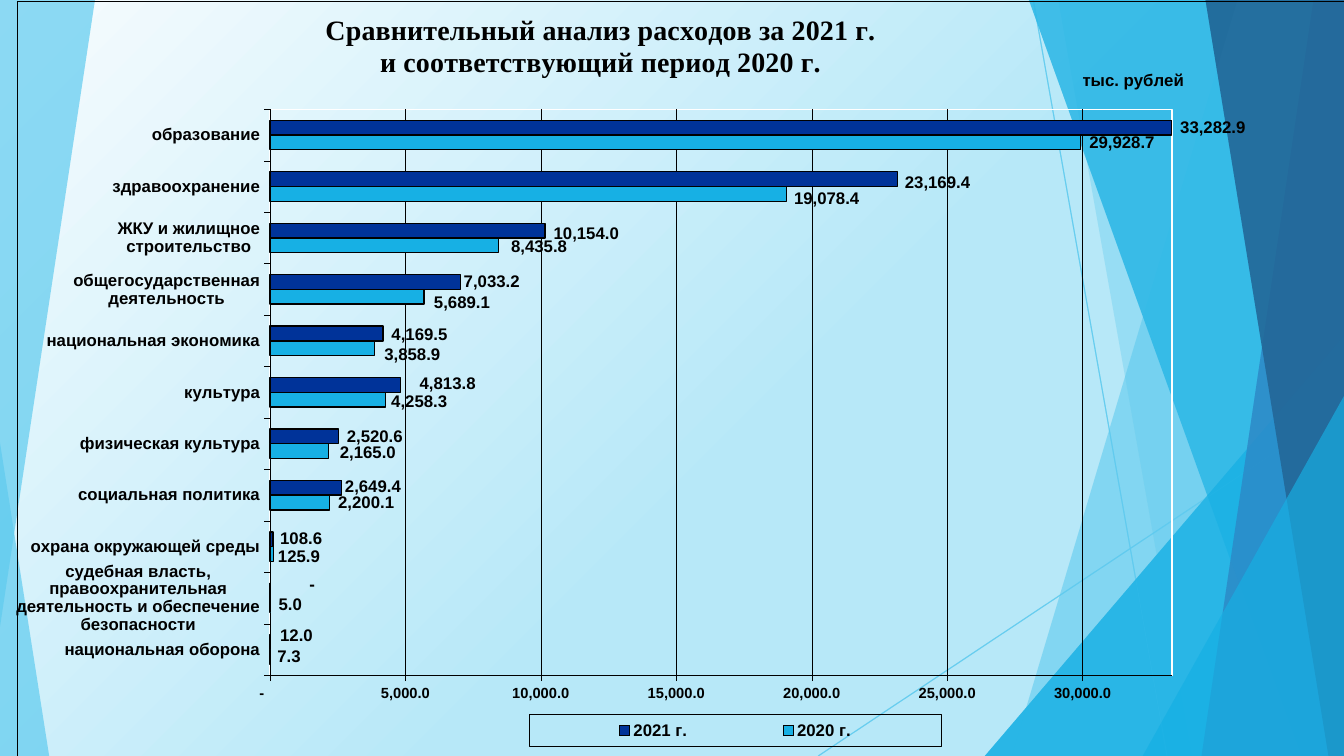
from dataclasses import dataclass

from lxml import etree
from pptx import Presentation
from pptx.chart.data import CategoryChartData
from pptx.dml.color import RGBColor
from pptx.enum.chart import XL_CHART_TYPE, XL_LABEL_POSITION, XL_LEGEND_POSITION, XL_TICK_MARK
from pptx.enum.shapes import MSO_CONNECTOR, MSO_SHAPE
from pptx.oxml.ns import qn
from pptx.util import Cm, Pt

BAR_CLUSTERED = XL_CHART_TYPE.BAR_CLUSTERED
OUTSIDE_END = XL_LABEL_POSITION.OUTSIDE_END
LEGEND_RIGHT = XL_LEGEND_POSITION.RIGHT
TICK_OUTSIDE = XL_TICK_MARK.OUTSIDE
STRAIGHT = MSO_CONNECTOR.STRAIGHT
TRIANGLE = MSO_SHAPE.ISOSCELES_TRIANGLE

WIDTH, HEIGHT = 33.87, 19.05
BLACK, WHITE = "000000", "FFFFFF"
SKY, AZURE, STEEL, NAVY, ROYAL = "5FCBEF", "17B0E4", "2E83C3", "226292", "003399"
BACKGROUND_STOPS = [(0, "F7FCFE"), (0.57, "B7E8F8")]
BODY_FONT, TITLE_FONT = "Arial", "Times New Roman"
HAIRLINE = 0.25
NUMBER_FORMAT = '_(* #,##0.0_);_(* \\(#,##0.0\\);_(* "-"??_);_(@_)'


@dataclass
class Ray:
    start: tuple[float, float]
    end: tuple[float, float]


@dataclass
class Panel:
    points: list[tuple[float, float]]
    color: str
    opacity: int


@dataclass
class Corner:
    """Right triangle on the bottom edge; apex is 0 for its left end, 1 for its right end."""
    left: float
    top: float
    width: float
    apex: int
    color: str
    opacity: int


@dataclass
class Spending:
    """One year; label_shifts maps a category index to (x, y) in thousandths of the chart."""
    year: str
    color: str
    values: list[float]
    label_shifts: dict[int, tuple[float, float]]


def side_panel(top_x: float, bottom_x: float, color: str, opacity: int) -> Panel:
    """Panel that fills everything from a slanted edge to the right side."""
    return Panel([(top_x, 0), (WIDTH, 0), (WIDTH, HEIGHT), (bottom_x, HEIGHT)], color, opacity)


RIGHT_FACETS = [
    Ray((26.04, 0), (29.41, HEIGHT)),
    Ray((WIDTH, 10.24), (20.62, HEIGHT)),
    side_panel(31.19, 25.5, SKY, 36),
    side_panel(26.67, 30.05, SKY, 20),
    Corner(24.82, 8.46, 9.05, 1, AZURE, 66),
    side_panel(25.93, 32.79, AZURE, 50),
    side_panel(33.1, 30.28, STEEL, 70),
    side_panel(30.38, 33.48, NAVY, 80),
    Corner(28.8, 9.98, 5.07, 1, AZURE, 66),
]
LEFT_CORNER = Corner(0, 11.15, 1.24, 0, SKY, 70)
LEFT_PANEL = Panel([(0, 0), (2.39, 0), (2.39, 0.03), (0, 15.8)], SKY, 70)
# Two translucent layers share the right side, which deepens its colours.
BACKDROP_LAYERS = [[*RIGHT_FACETS, LEFT_CORNER], [LEFT_PANEL, *RIGHT_FACETS]]

TITLE_LINES = ["Сравнительный анализ расходов за 2021 г.", "и соответствующий период 2020 г."]
UNIT_LINES = ["тыс. рублей"]
CATEGORIES = [
    "национальная оборона",
    "cудебная власть, правоохранительная деятельность и обеспечение безопасности",
    "охрана окружающей среды", "социальная политика", "физическая культура", "культура",
    "национальная экономика", "общегосударственная деятельность",
    "ЖКУ и жилищное строительство", "здравоохранение", "образование",
]
SPENDING = [
    Spending("2020 г.", AZURE,
             [7.3, 5, 125.9, 2200.1, 2165, 4258.3, 3858.9, 5689.1, 8435.8, 19078.4, 29928.7],
             {0: (-1, 0), 1: (0, -1), 2: (-3, 3), 4: (2, 2), 5: (-2, 3), 6: (1, 9),
              7: (1, 8), 8: (3, 2), 9: (-1, 6)}),
    Spending("2021 г.", ROYAL,
             [12, 0, 108.6, 2649.4, 2520.6, 4813.8, 4169.5, 7033.2, 10154, 23169.4, 33282.9],
             {0: (1, -9), 1: (23, -8), 2: (-1, -1), 3: (-4, -2), 4: (0, 0), 5: (8, -2),
              6: (0, 1), 7: (-4, 0), 8: (0, 4), 9: (-1, 5)}),
]


def rgb(color: str) -> RGBColor:
    return RGBColor.from_string(color)


def set_opacity(properties, percent: int) -> None:
    color = properties.find(".//" + qn("a:srgbClr"))
    etree.SubElement(color, qn("a:alpha"), val=str(percent * 1000))


def draw_ray(slide, ray: Ray) -> None:
    connector = slide.shapes.add_connector(STRAIGHT, *map(Cm, ray.start + ray.end))
    connector.line.color.rgb = rgb(SKY)
    connector.line.width = Pt(0.75)
    properties = connector.element.find(qn("p:spPr"))
    set_opacity(properties, 70)
    etree.SubElement(properties, qn("a:effectLst"))


def add_panel(slide, panel: Panel):
    start, *others = [(Cm(x), Cm(y)) for x, y in panel.points]
    builder = slide.shapes.build_freeform(*start)
    builder.add_line_segments(others)
    return builder.convert_to_shape()


def add_corner(slide, corner: Corner):
    box = (corner.left, corner.top, corner.width, HEIGHT - corner.top)
    shape = slide.shapes.add_shape(TRIANGLE, *map(Cm, box))
    shape.adjustments[0] = corner.apex
    return shape


def draw_facet(slide, facet: Ray | Panel | Corner) -> None:
    if isinstance(facet, Ray):
        draw_ray(slide, facet)
        return
    shape = add_panel(slide, facet) if isinstance(facet, Panel) else add_corner(slide, facet)
    shape.shadow.inherit = False
    shape.fill.solid()
    shape.fill.fore_color.rgb = rgb(facet.color)
    set_opacity(shape.element.find(qn("p:spPr")), facet.opacity)
    shape.line.fill.background()


def draw_backdrop(slide) -> None:
    fill = slide.background.fill
    fill.gradient()
    fill.gradient_angle = 315
    for stop, (position, color) in zip(fill.gradient_stops, BACKGROUND_STOPS):
        stop.position = position
        stop.color.rgb = rgb(color)
    for layer in BACKDROP_LAYERS:
        for facet in layer:
            draw_facet(slide, facet)


def style_font(font, size: float, name: str = BODY_FONT) -> None:
    font.size, font.name, font.bold = Pt(size), name, True
    font.color.rgb = rgb(BLACK)


def style_line(line, width: float) -> None:
    line.color.rgb = rgb(BLACK)
    line.width = Pt(width)


def place(part, child_index: int, modes: dict[str, str], **thousandths: float) -> None:
    """Give a chart part a manual layout, measured in thousandths of the chart."""
    for old_layout in part.findall(qn("c:layout")):
        part.remove(old_layout)
    layout = etree.Element(qn("c:layout"))
    manual = etree.SubElement(layout, qn("c:manualLayout"))
    fractions = {name: str(value / 1000) for name, value in thousandths.items()}
    for name, value in (modes | fractions).items():
        etree.SubElement(manual, qn("c:" + name), val=value)
    part.insert(child_index, layout)


FROM_EDGE = {"xMode": "edge", "yMode": "edge"}
INNER_FROM_EDGE = {"layoutTarget": "inner"} | FROM_EDGE
SHIFTED = {}


def outline_after(sibling, color: str, width: float) -> None:
    """Add unfilled shape properties with an outline right after a chart element."""
    properties = etree.Element(qn("c:spPr"))
    etree.SubElement(properties, qn("a:noFill"))
    line = etree.SubElement(properties, qn("a:ln"), w=str(Pt(width)))
    fill = etree.SubElement(line, qn("a:solidFill"))
    etree.SubElement(fill, qn("a:srgbClr"), val=color)
    sibling.addnext(properties)


def write_title(title, lines: list[str], size: float, font: str, x: float, y: float) -> None:
    frame = title.text_frame
    for index, text in enumerate(lines):
        paragraph = frame.add_paragraph() if index else frame.paragraphs[0]
        run = paragraph.add_run()
        run.text = text
        style_font(run.font, size, font)
    place(title._element, 1, FROM_EDGE, x=x, y=y)


def style_axis(axis, size: float) -> None:
    axis.major_tick_mark = TICK_OUTSIDE
    style_line(axis.format.line, HAIRLINE)
    style_font(axis.tick_labels.font, size)


def set_number_format(labels) -> None:
    labels.number_format = NUMBER_FORMAT
    labels.number_format_is_linked = False


def style_value_axis(axis) -> None:
    style_axis(axis, 10.5)
    axis.minimum_scale, axis.maximum_scale, axis.major_unit = 0, 33300, 5000
    set_number_format(axis.tick_labels)
    style_line(axis.major_gridlines.format.line, HAIRLINE)
    write_title(axis.axis_title, UNIT_LINES, 12, BODY_FONT, x=791, y=86)


def style_series(series, spending: Spending) -> None:
    series.format.fill.solid()
    series.format.fill.fore_color.rgb = rgb(spending.color)
    style_line(series.format.line, 1)
    labels = series.data_labels
    labels.show_value = True
    labels.position = OUTSIDE_END
    set_number_format(labels)
    style_font(labels.font, 12)
    for leader_lines in labels._element.findall(qn("c:showLeaderLines")):
        leader_lines.set("val", "0")
    for index in spending.label_shifts:
        label = series.points[index].data_label
        label.position = OUTSIDE_END
        style_font(label.font, 12)
    for element in labels._element.findall(qn("c:dLbl")):
        x, y = spending.label_shifts[int(element.find(qn("c:idx")).get("val"))]
        place(element, 1, SHIFTED, x=x, y=y)


def add_legend(chart) -> None:
    chart.has_legend = True
    chart.legend.position = LEGEND_RIGHT
    chart.legend.include_in_layout = False
    style_font(chart.legend.font, 12)
    legend = chart.element.find(".//" + qn("c:legend"))
    place(legend, 1, FROM_EDGE, x=381, y=944, w=307, h=42)
    outline_after(legend.find(qn("c:overlay")), BLACK, HAIRLINE)


def add_spending_chart(slide) -> None:
    data = CategoryChartData(number_format=NUMBER_FORMAT)
    data.categories = CATEGORIES
    for spending in SPENDING:
        data.add_series(spending.year, spending.values)
    box = map(Cm, (0.41, 0.03, WIDTH, HEIGHT))
    chart = slide.shapes.add_chart(BAR_CLUSTERED, *box, data).chart
    style_font(chart.font, 12)
    write_title(chart.chart_title, TITLE_LINES, 20, TITLE_FONT, x=227, y=12)
    plot = chart.plots[0]
    plot.gap_width, plot.overlap, plot.vary_by_categories = 150, 0, False
    for series, spending in zip(plot.series, SPENDING):
        style_series(series, spending)
    style_axis(chart.category_axis, 12)
    style_value_axis(chart.value_axis)
    add_legend(chart)
    plot_area = chart.element.find(".//" + qn("c:plotArea"))
    place(plot_area, 0, INNER_FROM_EDGE, x=188, y=143, w=672, h=749)
    outline_after(plot_area[-1], WHITE, 1)
    outline_after(chart.element.find(qn("c:chart")), BLACK, HAIRLINE)


def main() -> None:
    presentation = Presentation()
    presentation.slide_width, presentation.slide_height = Cm(WIDTH), Cm(HEIGHT)
    slide = presentation.slides.add_slide(presentation.slide_layouts[6])
    draw_backdrop(slide)
    add_spending_chart(slide)
    presentation.save("out.pptx")


if __name__ == "__main__":
    main()
